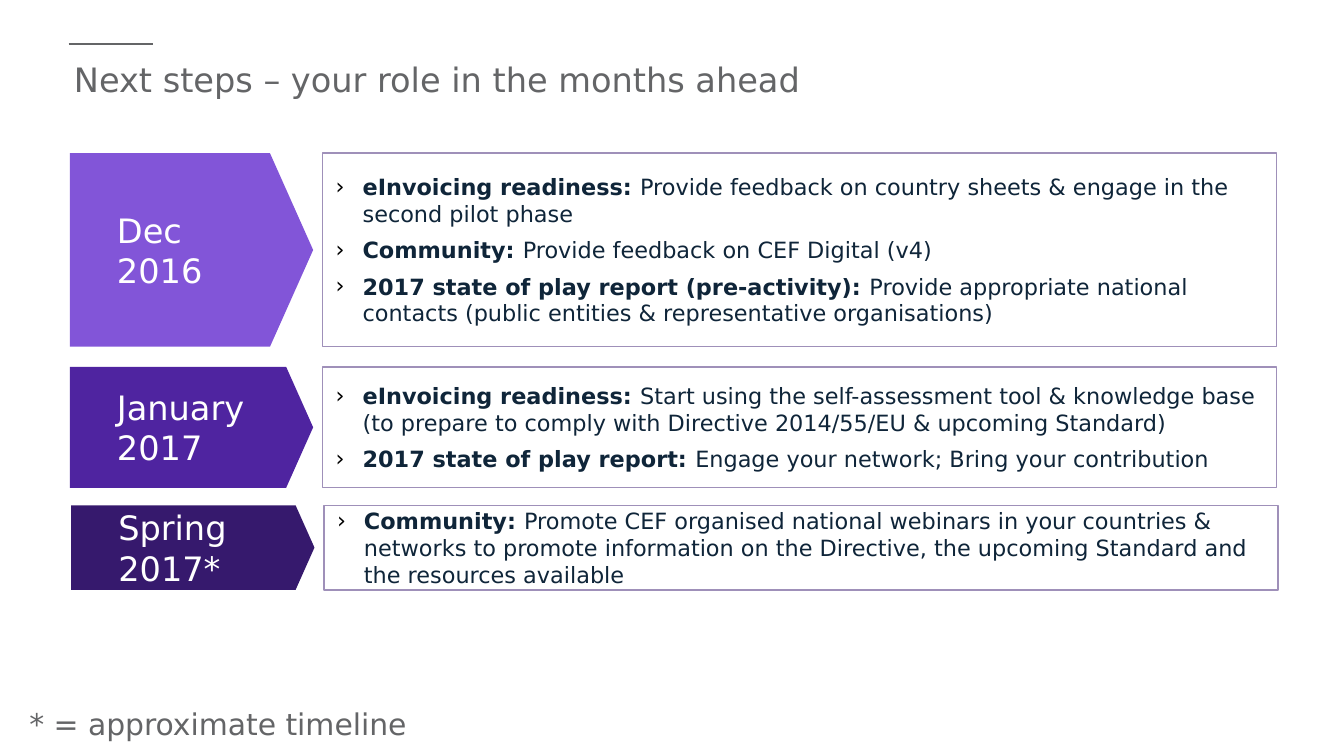
from dataclasses import dataclass

from lxml import etree
from pptx import Presentation
from pptx import util as u
from pptx.dml.color import RGBColor
from pptx.enum import shapes, text
from pptx.oxml import ns


@dataclass(frozen=True)
class Theme:
    font: str = "DejaVu Sans"
    grey: str = "646567"
    ink: str = "0F2539"
    white: str = "FFFFFF"
    bullet: str = "000000"
    border: str = "9F90B9"
    heading_size: int = 18
    note_size: int = 16
    body_size: int = 12


@dataclass
class SlideBuilder:
    theme: Theme
    slide: object

    def style(self, paragraph, size, color):
        for run in paragraph.runs:
            run.font.name = self.theme.font
            run.font.size = u.Pt(size)
            run.font.color.rgb = RGBColor.from_string(color)

    def frame(self, frame, anchor, margins):
        """Wrap the text, anchor it and set left, top, right, bottom margins."""
        frame.word_wrap = True
        frame.auto_size = text.MSO_AUTO_SIZE.NONE
        frame.vertical_anchor = anchor
        (frame.margin_left, frame.margin_top,
         frame.margin_right, frame.margin_bottom) = map(u.Inches, margins)

    def rule(self, left, right, y):
        line = self.slide.shapes.add_connector(
            shapes.MSO_CONNECTOR.STRAIGHT, *map(u.Inches, (left, y, right, y)))
        line.line.color.rgb = RGBColor.from_string(self.theme.grey)
        line.line.width = u.Pt(1)
        etree.SubElement(line._element.spPr, ns.qn("a:effectLst"))

    def title(self, wording, box):
        title = self.slide.shapes.title
        title.left, title.top, title.width, title.height = map(u.Inches, box)
        title.text_frame.text = wording
        self.frame(title.text_frame, text.MSO_ANCHOR.TOP, (0.04, 0.05, 0.04, 0.05))
        paragraph = title.text_frame.paragraphs[0]
        paragraph.alignment = text.PP_ALIGN.LEFT
        self.style(paragraph, self.theme.heading_size, self.theme.grey)

    def shape(self, kind, box):
        shape = self.slide.shapes.add_shape(kind, *map(u.Inches, box))
        shape.shadow.inherit = False
        return shape

    def period(self, wording, fill, box):
        arrow = self.shape(shapes.MSO_SHAPE.PENTAGON, box)
        arrow.adjustments[0] = 0.223
        arrow.fill.solid()
        arrow.fill.fore_color.rgb = RGBColor.from_string(fill)
        arrow.line.fill.background()
        arrow.text_frame.text = wording
        self.frame(arrow.text_frame, text.MSO_ANCHOR.MIDDLE, (0.35, 0, 0, 0))
        for paragraph in arrow.text_frame.paragraphs:
            paragraph.alignment = text.PP_ALIGN.LEFT
            self.style(paragraph, self.theme.heading_size, self.theme.white)

    def bullet(self, paragraph):
        paragraph.level = 2
        properties = paragraph._p.get_or_add_pPr()
        properties.set("marL", str(u.Inches(0.2)))
        properties.set("indent", str(u.Inches(-0.2)))
        color = etree.SubElement(properties, ns.qn("a:buClr"))
        etree.SubElement(color, ns.qn("a:srgbClr"), val=self.theme.bullet)
        etree.SubElement(properties, ns.qn("a:buFont"), typeface=self.theme.font)
        etree.SubElement(properties, ns.qn("a:buChar"), char="›")

    def actions(self, items, box):
        """Draw a bordered box of bullets, each a bold topic and its task."""
        panel = self.shape(shapes.MSO_SHAPE.RECTANGLE, box)
        panel.fill.background()
        panel.line.color.rgb = RGBColor.from_string(self.theme.border)
        panel.line.width = u.Pt(0.75)
        self.frame(panel.text_frame, text.MSO_ANCHOR.MIDDLE, (0.1, 0.05, 0.1, 0.05))
        for index, (topic, task) in enumerate(items):
            paragraph = (panel.text_frame.add_paragraph() if index
                         else panel.text_frame.paragraphs[0])
            self.bullet(paragraph)
            paragraph.alignment = text.PP_ALIGN.LEFT
            paragraph.space_before = u.Pt(5 if index else 0)
            for wording, bold in ((topic + " ", True), (task, False)):
                run = paragraph.add_run()
                run.text = wording
                run.font.bold = bold
            self.style(paragraph, self.theme.body_size, self.theme.ink)

    def note(self, wording, box):
        note = self.slide.shapes.add_textbox(*map(u.Inches, box))
        note.text_frame.text = wording
        self.frame(note.text_frame, text.MSO_ANCHOR.TOP, (0.1, 0.05, 0.1, 0.05))
        note.text_frame.auto_size = text.MSO_AUTO_SIZE.SHAPE_TO_FIT_TEXT
        self.style(note.text_frame.paragraphs[0], self.theme.note_size, self.theme.grey)


# Period, arrow fill, left, top, height, actions
STEPS = [
    ("Dec\n2016", "8255D8", 0.52, 1.14, 1.44, [
        ("eInvoicing readiness:",
         "Provide feedback on country sheets & engage in the second pilot phase"),
        ("Community:", "Provide feedback on CEF Digital (v4)"),
        ("2017 state of play report (pre-activity):",
         "Provide appropriate national contacts "
         "(public entities & representative organisations)"),
    ]),
    ("January 2017", "4F24A0", 0.52, 2.73, 0.9, [
        ("eInvoicing readiness:",
         "Start using the self-assessment tool & knowledge base "
         "(to prepare to comply with Directive 2014/55/EU & upcoming Standard)"),
        ("2017 state of play report:",
         "Engage your network; Bring your contribution"),
    ]),
    ("Spring 2017*", "36196D", 0.53, 3.76, 0.63, [
        ("Community:",
         "Promote CEF organised national webinars in your countries & networks "
         "to promote information on the Directive, the upcoming Standard and "
         "the resources available"),
    ]),
]
ARROW_WIDTH, PANEL_OFFSET, PANEL_WIDTH = 1.81, 1.88, 7.1


def main():
    deck = Presentation()
    deck.slide_width = u.Inches(10)
    deck.slide_height = deck.slide_width * 9 // 16
    builder = SlideBuilder(Theme(), deck.slides.add_slide(deck.slide_layouts[5]))

    builder.rule(0.51, 1.14, 0.33)
    builder.title("Next steps – your role in the months ahead", (0.51, 0.39, 8.99, 0.77))
    for period, fill, left, top, height, items in STEPS:
        builder.period(period, fill, (left, top, ARROW_WIDTH, height))
        builder.actions(items, (left + PANEL_OFFSET, top, PANEL_WIDTH, height))
    builder.note("* = approximate timeline", (0.12, 5.2, 3.62, 0.37))

    deck.save("out.pptx")


if __name__ == "__main__":
    main()
